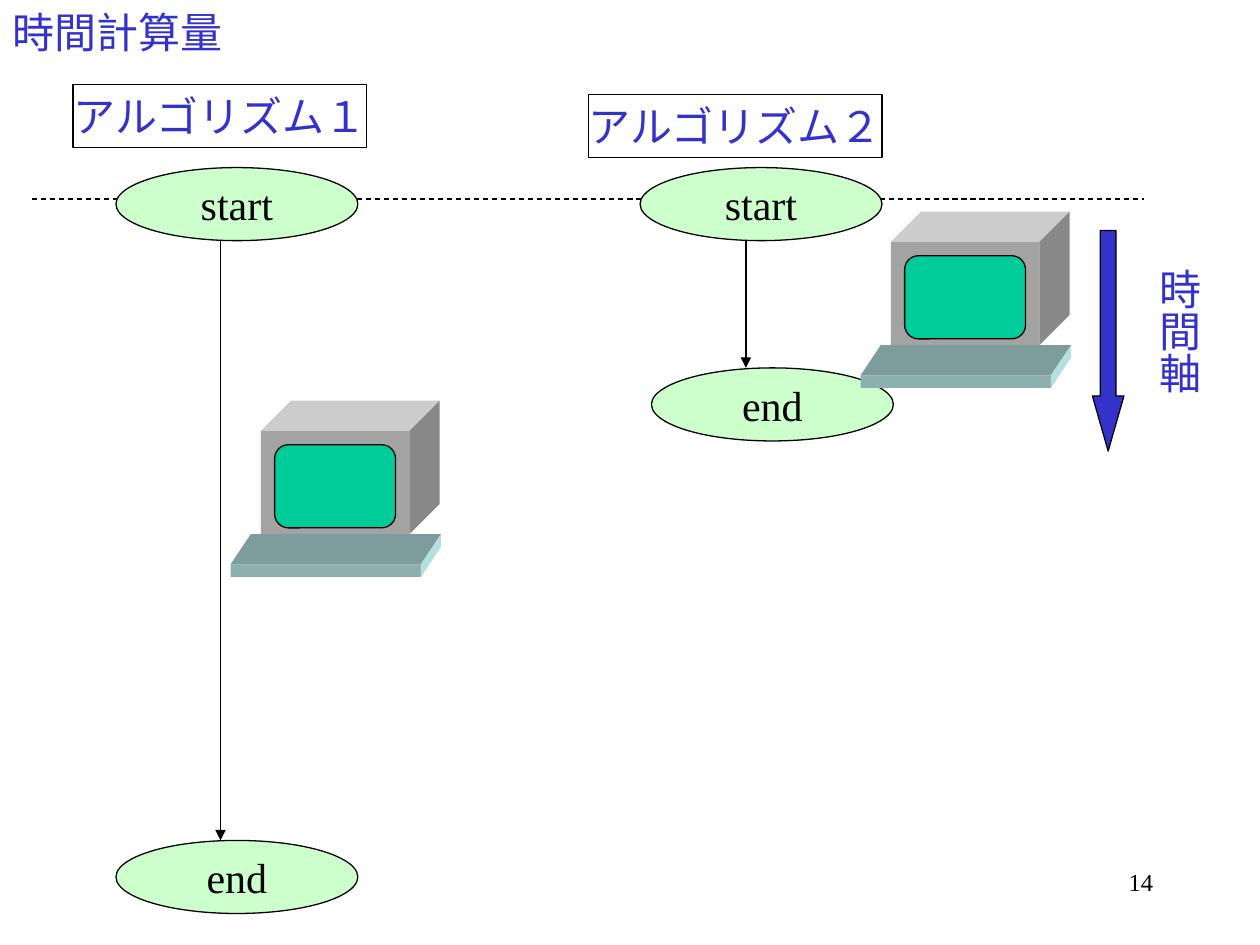
"""Builds a slide comparing the running time of two algorithms."""
from dataclasses import dataclass

from lxml import etree
from pptx import Presentation
from pptx import util as u
from pptx.dml.color import RGBColor
from pptx.enum import dml, shapes, text
from pptx.oxml.ns import qn


@dataclass(frozen=True)
class Theme:
    font: str = "Times New Roman"
    body_size: int = 24
    number_size: int = 14
    line_width: float = 0.75
    ink: str = "000000"
    accent: str = "3333CC"
    node: str = "CCFFCC"
    screen: str = "00CC99"
    case_front: str = "A3A3A3"
    case_top: str = "CCCCCC"
    case_side: str = "888888"
    keyboard_front: str = "8CB0B0"
    keyboard_top: str = "7E9C9C"
    keyboard_side: str = "B3DFDF"


THEME = Theme()
KIND = shapes.MSO_SHAPE


def color(value):
    return RGBColor.from_string(value)


def write(shape, words, ink, size=THEME.body_size, align=text.PP_ALIGN.LEFT,
          anchor=text.MSO_ANCHOR.TOP):
    frame = shape.text_frame
    frame.word_wrap = False
    frame.auto_size = text.MSO_AUTO_SIZE.NONE
    frame.vertical_anchor = anchor
    paragraph = frame.paragraphs[0]
    paragraph.alignment = align
    run = paragraph.add_run()
    run.text = words
    run.font.name = THEME.font
    run.font.size = u.Pt(size)
    run.font.color.rgb = color(ink)


def paint(shape, fill=None, outlined=True):
    shape.shadow.inherit = False
    if fill:
        shape.fill.solid()
        shape.fill.fore_color.rgb = color(fill)
    else:
        shape.fill.background()
    if outlined:
        shape.line.color.rgb = color(THEME.ink)
        shape.line.width = u.Pt(THEME.line_width)
    else:
        shape.line.fill.background()


def add_box(container, kind, box, fill=None, outlined=True):
    shape = container.add_shape(kind, *map(u.Inches, box))
    paint(shape, fill, outlined)
    return shape


def add_label(slide, kind, box, words, ink, fill=None):
    shape = add_box(slide.shapes, kind, box, fill)
    write(shape, words, ink, align=text.PP_ALIGN.CENTER, anchor=text.MSO_ANCHOR.MIDDLE)


def add_text(slide, box, words, ink, **style):
    shape = slide.shapes.add_textbox(*map(u.Inches, box))
    write(shape, words, ink, **style)
    return shape


def add_line(slide, start, end, dashed=False, arrow=False):
    line = slide.shapes.add_connector(
        shapes.MSO_CONNECTOR.STRAIGHT, *map(u.Inches, (*start, *end)))
    line.line.color.rgb = color(THEME.ink)
    line.line.width = u.Pt(THEME.line_width)
    if dashed:
        line.line.dash_style = dml.MSO_LINE.DASH
    if arrow:
        etree.SubElement(line.line._get_or_add_ln(), qn("a:tailEnd"), type="triangle")
    etree.SubElement(line._element.spPr, qn("a:effectLst"))


def add_face(container, points, fill):
    corners = [tuple(map(u.Inches, point)) for point in points]
    builder = container.build_freeform(*corners[0], scale=1.0)
    builder.add_line_segments(corners[1:], close=True)
    paint(builder.convert_to_shape(), fill, outlined=False)


def add_block(container, box, shift, rise, fills):
    left, top, width, height = box
    right, bottom = left + width, top + height
    front, lid, side = fills
    add_box(container, KIND.RECTANGLE, box, front, outlined=False)
    back_left, back_right = (left + shift, top - rise), (right + shift, top - rise)
    add_face(container, [(left, top), back_left, back_right, (right, top)], lid)
    add_face(container, [(right, top), back_right, (right + shift, bottom - rise),
                         (right, bottom)], side)


def add_computer(slide, left, top):
    group = slide.shapes.add_group_shape().shapes
    add_block(group, (left + 0.24, top + 0.24, 1.18, 0.82), 0.24, 0.24,
              (THEME.case_front, THEME.case_top, THEME.case_side))
    add_block(group, (left, top + 1.3, 1.51, 0.1), 0.16, 0.24,
              (THEME.keyboard_front, THEME.keyboard_top, THEME.keyboard_side))
    add_box(group, KIND.ROUNDED_RECTANGLE, (left + 0.35, top + 0.35, 0.96, 0.66),
            THEME.screen)


def add_algorithm(slide, name, label_at, start_at, end_at, arrow_x):
    node_size = (1.92, 0.58)
    add_label(slide, KIND.RECTANGLE, (*label_at, 2.33, 0.5), name, THEME.accent)
    for words, place in (("start", start_at), ("end", end_at)):
        add_label(slide, KIND.OVAL, (*place, *node_size), words, THEME.ink, THEME.node)
    add_line(slide, (arrow_x, start_at[1] + node_size[1]), (arrow_x, end_at[1]), arrow=True)


def add_title(slide, box, words):
    title = slide.shapes.title
    title.left, title.top, title.width, title.height = map(u.Inches, box)
    write(title, words, THEME.accent)


def add_time_axis(slide):
    arrow = add_box(slide.shapes, KIND.DOWN_ARROW, (8.67, 1.83, 0.25, 1.75), THEME.accent)
    arrow.adjustments[0], arrow.adjustments[1] = 0.5, 1.75
    caption = add_text(slide, (9.01, 2.03, 0.6, 1.1), "時間軸", THEME.accent)
    caption.text_frame._txBody.bodyPr.set("vert", "eaVert")


def main():
    presentation = Presentation()
    presentation.slide_width, presentation.slide_height = u.Inches(10), u.Inches(7.5)
    slide = presentation.slides.add_slide(presentation.slide_layouts[5])
    add_title(slide, (0, 0, 1.87, 0.5), "時間計算量")
    add_line(slide, (0.25, 1.58), (9.08, 1.58), dashed=True)
    add_algorithm(slide, "アルゴリズム１", (0.58, 0.67), (0.92, 1.33), (0.92, 6.67), 1.75)
    add_algorithm(slide, "アルゴリズム２", (4.67, 0.75), (5.08, 1.33), (5.17, 2.92), 5.92)
    for left, top in ((1.83, 3.18), (6.83, 1.68)):
        add_computer(slide, left, top)
    add_time_axis(slide)
    add_text(slide, (7.17, 6.83, 2.08, 0.5), "14", THEME.ink,
             size=THEME.number_size, align=text.PP_ALIGN.RIGHT)
    presentation.save("out.pptx")


if __name__ == "__main__":
    main()
